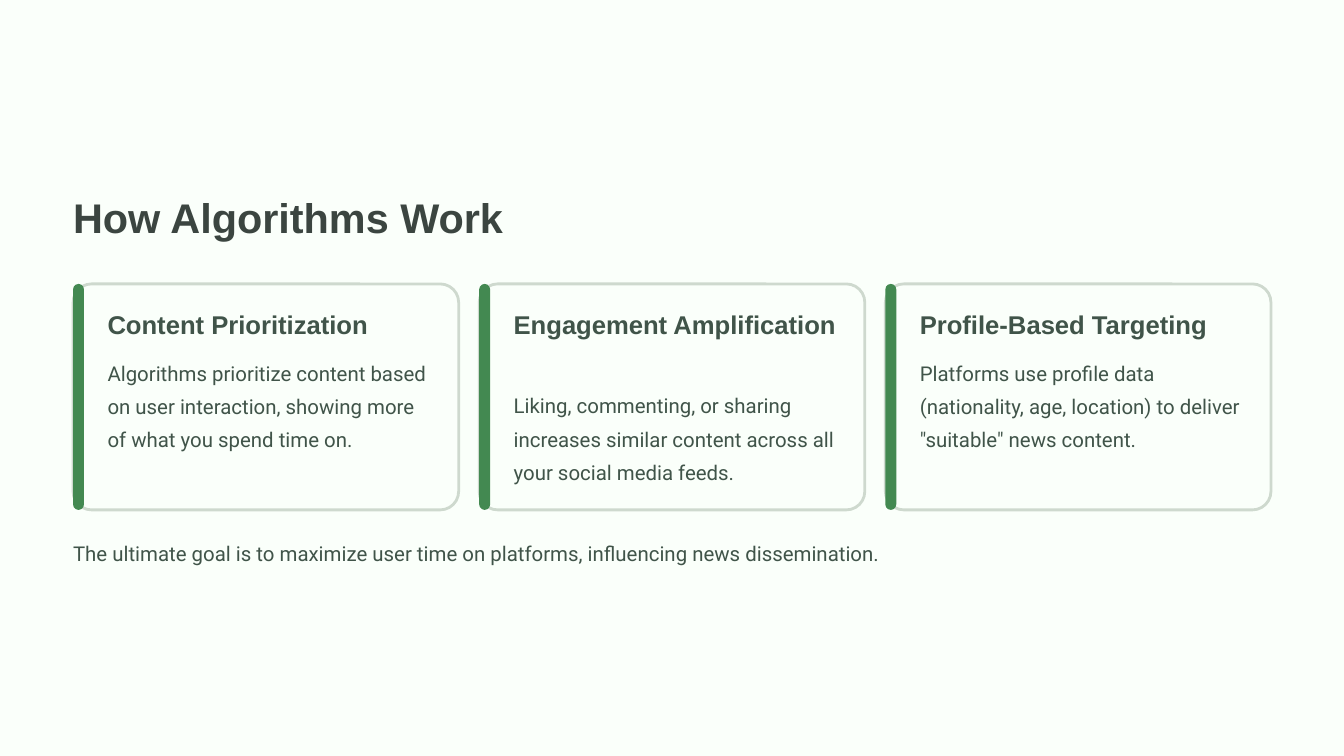
from pptx import Presentation
from pptx.dml.color import RGBColor
from pptx.enum import shapes
from pptx.util import Inches, Pt

PAPER, EDGE, ACCENT = "FAFFFA", "CED9CE", "438951"
TITLE_COLOR, TEXT_COLOR = "3B4540", "405449"
LEFT, CARD_TOP, CARD_WIDTH, CARD_HEIGHT = 0.87, 3.38, 4.59, 2.69
CARD_STEP = 4.835
TEXT_INSET, TEXT_WIDTH = 0.41, 3.89

# Heading, body, and top and height of the body
CARDS = [
    ("Content Prioritization",
     "Algorithms prioritize content based on user interaction, "
     "showing more of what you spend time on.", 4.19, 1.59),
    ("Engagement Amplification",
     "Liking, commenting, or sharing increases similar content "
     "across all your social media feeds.", 4.58, 1.19),
    ("Profile-Based Targeting",
     "Platforms use profile data (nationality, age, location) "
     'to deliver "suitable" news content.', 4.19, 1.19),
]


def paint(fill, color):
    fill.solid()
    fill.fore_color.rgb = RGBColor.from_string(color)


def add_rounded(page, left, width, radius, color, edge=None):
    """Add a rounded panel of card height; radius is in inches."""
    panel = page.shapes.add_shape(
        shapes.MSO_SHAPE.ROUNDED_RECTANGLE, Inches(left), Inches(CARD_TOP),
        Inches(width), Inches(CARD_HEIGHT))
    panel.adjustments[0] = radius / min(width, CARD_HEIGHT)
    panel.shadow.inherit = False
    paint(panel.fill, color)
    if edge:
        paint(panel.line.fill, edge)
        panel.line.width = Pt(2.4)
    else:
        panel.line.fill.background()


def add_text(page, words, left, top, width, height, size=17.5, spacing=28.5,
             font="Roboto", color=TEXT_COLOR, bold=False, wrap=False):
    box = page.shapes.add_textbox(
        Inches(left), Inches(top), Inches(width), Inches(height))
    frame = box.text_frame
    frame.margin_left = frame.margin_right = 0
    frame.margin_top = frame.margin_bottom = 0
    frame.word_wrap = wrap
    frame.text = words
    para = frame.paragraphs[0]
    para.line_spacing = Pt(spacing)
    span = para.runs[0]
    span.font.name = font
    span.font.size = Pt(size)
    span.font.bold = bold
    span.font.color.rgb = RGBColor.from_string(color)


def add_card(page, left, heading, body, body_top, body_height):
    add_rounded(page, left, CARD_WIDTH, 0.22, PAPER, EDGE)
    add_rounded(page, left, 0.13, 0.065, ACCENT)
    text_left = left + TEXT_INSET
    add_text(page, heading, text_left, 3.66, TEXT_WIDTH, 0.39, size=22,
             spacing=27.5, font="Arial", bold=True)
    add_text(page, body, text_left, body_top, TEXT_WIDTH, body_height, wrap=True)


def main():
    deck = Presentation()
    deck.slide_width, deck.slide_height = Inches(16), Inches(9)
    page = deck.slides.add_slide(deck.slide_layouts[6])
    paint(page.background.fill, PAPER)

    add_text(page, "How Algorithms Work", LEFT, 2.26, 5.66, 0.62, size=35.5,
             spacing=44.5, font="Arial", color=TITLE_COLOR, bold=True)
    for index, card in enumerate(CARDS):
        add_card(page, LEFT + index * CARD_STEP, *card)
    add_text(page, "The ultimate goal is to maximize user time on platforms, "
             "influencing news dissemination.", LEFT, 6.34, 14.26, 0.4)

    deck.save("out.pptx")


if __name__ == "__main__":
    main()
